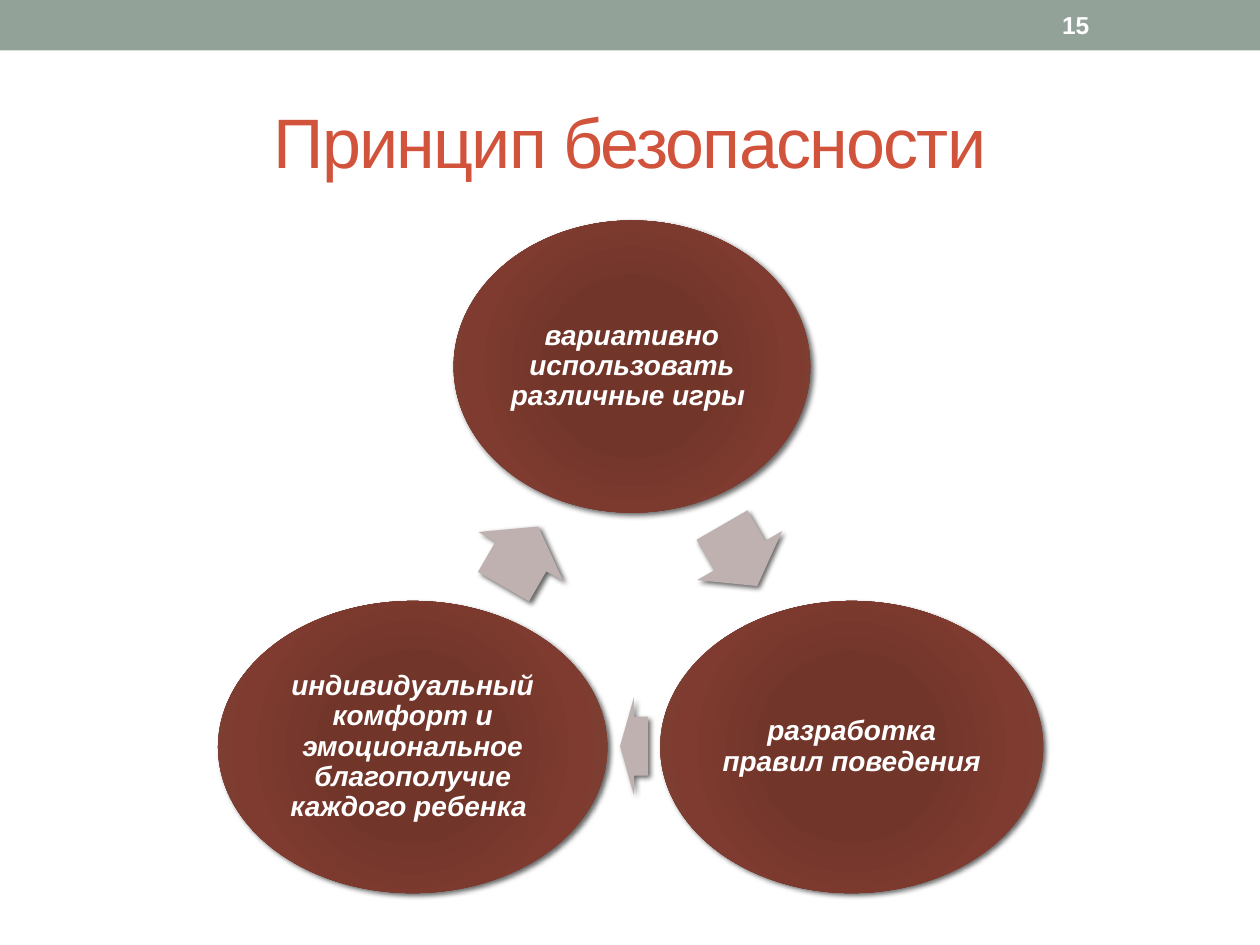
from lxml import etree
from pptx import Presentation
from pptx.dml.color import RGBColor
from pptx.enum.shapes import MSO_SHAPE
from pptx.enum.text import MSO_ANCHOR, PP_ALIGN
from pptx.oxml import parse_xml
from pptx.oxml.ns import nsdecls
from pptx.util import Cm, Pt

RECTANGLE = MSO_SHAPE.RECTANGLE
OVAL = MSO_SHAPE.OVAL
RIGHT_ARROW = MSO_SHAPE.RIGHT_ARROW
LEFT = PP_ALIGN.LEFT
CENTER = PP_ALIGN.CENTER
MIDDLE = MSO_ANCHOR.MIDDLE

COLORS = {
    "band": "93A299",
    "title": "D2533C",
    "arrow": "BEB1AF",
    "white": "FFFFFF",
    "shadow": "000000",
    "oval_center": "743327",
    "oval_inner": "72352A",
    "oval_outer": "7F3B2F",
    "oval_edge": "79463D",
}
OVAL_STOPS = [(0, "oval_center"), (34, "oval_inner"), (70, "oval_outer"), (100, "oval_edge")]

OVAL_HEIGHT = 5.89
TOP_ROW, BOTTOM_ROW = 7.39, 15.06
PRINCIPLES = [
    (12.74, TOP_ROW, 7.19, "вариативно использовать различные игры "),
    (17.17, BOTTOM_ROW, 7.72, "разработка правил поведения"),
    (8.32, BOTTOM_ROW, 7.85, "индивидуальный комфорт и эмоциональное благополучие каждого ребенка "),
]
ARROW_HEIGHT = 1.98
ARROWS = [(14.91, 11.2, 1.42, 60), (12.78, 15.04, 0.56, 180), (10.5, 11.22, 1.4, 300)]


def color(name):
    return RGBColor.from_string(COLORS[name])


def write_text(shape, text, size, color_name="white", bold=False, italic=False,
               align=CENTER, line_spacing=None, inset=None, tracking=None):
    frame = shape.text_frame
    frame.word_wrap = True
    frame.vertical_anchor = MIDDLE
    if inset is not None:
        frame.margin_left = frame.margin_right = Cm(inset)
        frame.margin_top = frame.margin_bottom = Cm(inset)
    paragraph = frame.paragraphs[0]
    paragraph.alignment = align
    if line_spacing is not None:
        paragraph.line_spacing = line_spacing
    run = paragraph.add_run()
    run.text = text
    run.font.name = "Arial"
    run.font.size = Pt(size)
    run.font.bold = bold
    run.font.italic = italic
    run.font.color.rgb = color(color_name)
    if tracking is not None:
        run.font._element.set("spc", str(tracking * 100))


def add_text_box(slide, left, top, width, height, text, **style):
    box = slide.shapes.add_textbox(Cm(left), Cm(top), Cm(width), Cm(height))
    write_text(box, text, **style)


def add_filled_shape(slide, kind, left, top, width, height, fill):
    shape = slide.shapes.add_shape(kind, Cm(left), Cm(top), Cm(width), Cm(height))
    shape.shadow.inherit = False
    shape.fill.solid()
    shape.fill.fore_color.rgb = color(fill)
    shape.line.fill.background()
    return shape


def add_centered_shape(slide, kind, center_x, center_y, width, height, fill):
    shape = add_filled_shape(slide, kind, center_x - width / 2, center_y - height / 2,
                             width, height, fill)
    effects = shape._element.spPr.find("{*}effectLst")
    effects.append(parse_xml(
        f'<a:outerShdw {nsdecls("a")} blurRad="38100" dist="25400" dir="2700000" rotWithShape="0">'
        f'<a:srgbClr val="{COLORS["shadow"]}"><a:alpha val="60000"/></a:srgbClr></a:outerShdw>'))
    return shape


def set_radial_gradient(shape, stops):
    solid = shape._element.spPr.find("{*}solidFill")
    gradient = parse_xml(
        f'<a:gradFill {nsdecls("a")} rotWithShape="1"><a:gsLst/><a:path path="circle">'
        '<a:fillToRect l="100000" t="100000" r="100000" b="100000"/></a:path></a:gradFill>')
    stop_list = gradient.find("{*}gsLst")
    namespace = etree.QName(stop_list).namespace
    for position, name in stops:
        stop = etree.SubElement(stop_list, f"{{{namespace}}}gs", pos=str(position * 1000))
        etree.SubElement(stop, f"{{{namespace}}}srgbClr", val=COLORS[name])
    solid.getparent().replace(solid, gradient)


def add_principle(slide, center_x, center_y, width, text):
    oval = add_centered_shape(slide, OVAL, center_x, center_y, width, OVAL_HEIGHT, "oval_center")
    set_radial_gradient(oval, OVAL_STOPS)
    write_text(oval, text, size=16, bold=True, italic=True, line_spacing=0.9, inset=0.05)


def add_cycle_arrow(slide, center_x, center_y, width, rotation):
    arrow = add_centered_shape(slide, RIGHT_ARROW, center_x, center_y, width, ARROW_HEIGHT, "arrow")
    arrow.adjustments[0] = 0.6
    arrow.adjustments[1] = 0.5
    arrow.rotation = rotation


def main():
    presentation = Presentation()
    presentation.slide_width = Cm(25.4)
    presentation.slide_height = Cm(19.05)
    slide = presentation.slides.add_slide(presentation.slide_layouts[6])

    add_filled_shape(slide, RECTANGLE, 0, 0, 25.4, 1.02, "band")
    add_text_box(slide, 1.27, 1.47, 22.86, 2.74, "Принцип безопасности",
                 size=40, color_name="title", tracking=-1)
    for principle, arrow in zip(PRINCIPLES, ARROWS):
        add_principle(slide, *principle)
        add_cycle_arrow(slide, *arrow)
    add_text_box(slide, 21.16, 0.05, 2.97, 0.91, "15", size=14, bold=True, align=LEFT)

    presentation.save("out.pptx")


if __name__ == "__main__":
    main()
